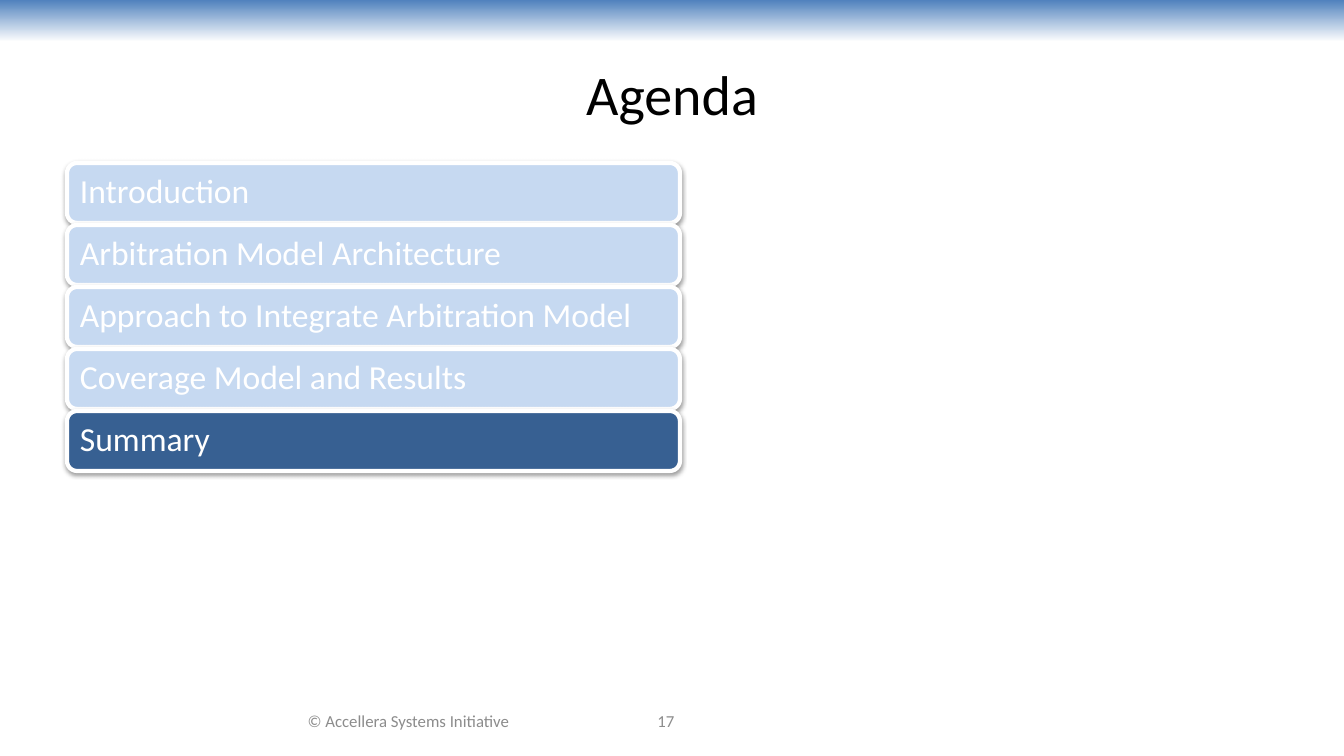
from lxml import etree
from pptx import Presentation
from pptx.dml.color import RGBColor
from pptx.enum.shapes import MSO_SHAPE
from pptx.enum.text import MSO_ANCHOR, PP_ALIGN
from pptx.oxml import parse_xml
from pptx.util import Pt

PX = 914400 / 100.8
RECT, ROUND_RECT = MSO_SHAPE.RECTANGLE, MSO_SHAPE.ROUNDED_RECTANGLE
MIDDLE = MSO_ANCHOR.MIDDLE
LEFT, CENTER = PP_ALIGN.LEFT, PP_ALIGN.CENTER
FONT = "Calibri"
WHITE, BLACK, GREY = "FFFFFF", "000000", "8C8C8C"
BLUE, PALE_BLUE, DARK_BLUE = "4F81BD", "C6D9F1", "376092"
SHADOW = (
    '<a:effectLst xmlns:a="http://schemas.openxmlformats.org/drawingml/2006/main">'
    '<a:outerShdw blurRad="40000" dist="20000" dir="5400000" rotWithShape="0">'
    '<a:srgbClr val="000000"><a:alpha val="38000"/></a:srgbClr>'
    '</a:outerShdw></a:effectLst>'
)

TOPICS = [
    "Introduction",
    "Arbitration Model Architecture",
    "Approach to Integrate Arbitration Model",
    "Coverage Model and Results",
    "Summary",
]
CURRENT = "Summary"


def px(n):
    return round(n * PX)


def rgb(value):
    return RGBColor.from_string(value)


def set_text(sp, text, size, color, align, inset):
    tf = sp.text_frame
    tf.word_wrap = True
    tf.vertical_anchor = MIDDLE
    tf.margin_left = tf.margin_right = px(inset)
    tf.margin_top = tf.margin_bottom = px(5)
    p = tf.paragraphs[0]
    p.text = text
    p.alignment = align
    p.font.name = FONT
    p.font.size = Pt(size)
    p.font.color.rgb = rgb(color)
    return p


def add_label(s, x, y, w, h, text, size, color):
    sp = s.shapes.add_textbox(px(x), px(y), px(w), px(h))
    set_text(sp, text, size, color, CENTER, 10)


def add_band(s, x, y, w, h):
    sp = s.shapes.add_shape(RECT, px(x), px(y), px(w), px(h))
    sp.shadow.inherit = False
    sp.line.fill.background()
    sp.fill.gradient()
    sp.fill.gradient_angle = 270
    for stop, color, position in zip(sp.fill.gradient_stops, (BLUE, WHITE), (0, 1)):
        stop.color.rgb = rgb(color)
        stop.position = position


def add_topic(s, x, y, w, h, text, color):
    sp = s.shapes.add_shape(ROUND_RECT, px(x), px(y), px(w), px(h))
    sp.fill.solid()
    sp.fill.fore_color.rgb = rgb(color)
    sp.line.color.rgb = rgb(WHITE)
    sp.line.width = Pt(3)
    sp._element.spPr.append(parse_xml(SHADOW))
    p = set_text(sp, text, 24, WHITE, LEFT, 10)
    p.line_spacing = 0.9


def add_agenda(s, x, y, w, h):
    # Equal rows, each overlapping its neighbour's outline
    pitch = h / len(TOPICS)
    for i, topic in enumerate(TOPICS):
        color = DARK_BLUE if topic == CURRENT else PALE_BLUE
        add_topic(s, x, y + i * pitch, w, pitch - 2, topic, color)


def add_footer(s, x, y, w, h):
    add_label(s, x, y, 325, h, "© Accellera Systems Initiative", 12, GREY)
    add_label(s, x + w - 258, y, 258, h, "17", 12, GREY)


def main():
    prs = Presentation()
    prs.slide_width, prs.slide_height = px(1344), px(756)
    s = prs.slides.add_slide(prs.slide_layouts[6])

    # Header band and title
    add_band(s, 0, 0, 1344, 42)
    add_label(s, 67, 30, 1210, 126, "Agenda", 40, BLACK)

    # Agenda list
    add_agenda(s, 67, 163, 613, 310)

    # Copyright line and slide number
    add_footer(s, 246, 701, 549, 40)

    prs.save("out.pptx")


if __name__ == "__main__":
    main()
